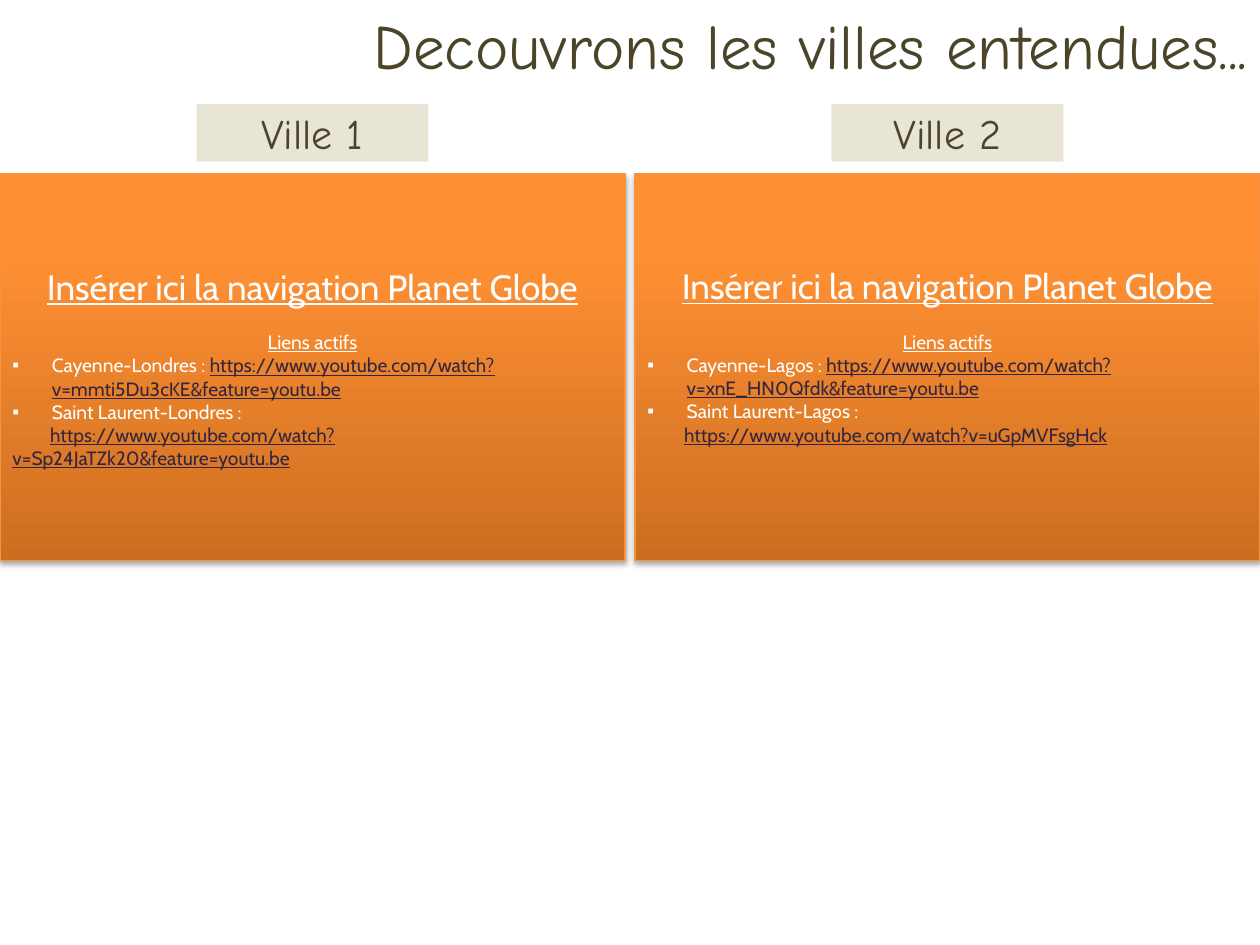
from copy import deepcopy
from pptx import Presentation
from pptx.dml.color import RGBColor
from pptx.enum.shapes import MSO_SHAPE
from pptx.enum.text import MSO_ANCHOR, PP_ALIGN
from pptx.oxml import parse_xml
from pptx.oxml.ns import nsdecls, qn
from pptx.util import Pt

HEX = {"ink": "4A452A", "white": "FFFFFF", "link": "32263F", "tag": "C4BD97",
       "edge": "F69240", "dark": "CC6E20", "mid": "FF9034", "top": "FF9136"}
STOPS = [(0, "dark"), (0.8, "mid"), (1, "top")]
HEAD, BODY = "Comic Neue", "Cabin"
LINE = 13.4  # one line of 11 pt body text

TITLE = "Decouvrons les villes entendues..."
PROMPT = "Insérer ici la navigation Planet Globe"
LINKS = "Liens actifs"
URL = "https://www.youtube.com/watch?v="
# Each row: style, plain text, address
CITIES = [
    {"tag": "Ville 1", "foot": 3.6, "rows": [
        ("bullet", "Cayenne-Londres : ", URL + "mmti5Du3cKE&feature=youtu.be"),
        ("bullet", "Saint Laurent-Londres :", ""),
        ("tab", "\t", URL + "Sp24JaTZk20&feature=youtu.be")]},
    {"tag": "Ville 2", "foot": 3.6 + LINE, "rows": [
        ("bullet", "Cayenne-Lagos : ", URL + "xnE_HN0Qfdk&feature=youtu.be"),
        ("bullet", "Saint Laurent-Lagos :", ""),
        ("indent", "", URL + "uGpMVFsgHck")]},
]

WIDE, HIGH = 720, 540
CARD_W, CARD_H, CARD_Y = 357.2, 221.2, 99.2
TAG_W, TAG_H, TAG_Y = 132.5, 33, 59.4


def color(name):
    return RGBColor.from_string(HEX[name])


def add_run(par, text, size, font=BODY, ink="white", under=False):
    run = par.add_run()
    run.text = text
    run.font.size = Pt(size)
    run.font.name = font
    run.font.underline = under
    run.font.color.rgb = color(ink)


def add_box(x, y, w, h):
    box = slide.shapes.add_shape(MSO_SHAPE.RECTANGLE, Pt(x), Pt(y), Pt(w), Pt(h))
    box.shadow.inherit = False
    box.text_frame.word_wrap = True
    box.text_frame.vertical_anchor = MSO_ANCHOR.MIDDLE
    return box


def paint(box):
    """Give a card its gradient, edge and soft shadow."""
    box.fill.gradient()
    box.fill.gradient_angle = 90
    group = box._element.spPr.find(".//" + qn("a:gsLst"))
    group.append(deepcopy(group[0]))
    for stop, (place, name) in zip(box.fill.gradient_stops, STOPS):
        stop.position = place
        stop.color.rgb = color(name)
    box.line.color.rgb = color("edge")
    box.line.width = Pt(0.75)
    box._element.spPr.find(qn("a:effectLst")).append(parse_xml(
        f'<a:outerShdw {nsdecls("a")} blurRad="{Pt(3.1)}" dist="{Pt(1.8)}" '
        'dir="5400000" rotWithShape="0"><a:srgbClr val="000000">'
        '<a:alpha val="35000"/></a:srgbClr></a:outerShdw>'))


def set_style(par, style):
    par.alignment = PP_ALIGN.LEFT
    props = par._p.get_or_add_pPr()
    if style == "bullet":
        props.set("marL", str(Pt(22.5)))
        props.set("indent", str(Pt(-22.5)))
        props.append(parse_xml(f'<a:buFont {nsdecls("a")} typeface="Arial"/>'))
        props.append(parse_xml(f'<a:buChar {nsdecls("a")} char="▪"/>'))
    elif style == "tab":
        props.append(parse_xml(f'<a:tabLst {nsdecls("a")}>'
                               f'<a:tab pos="{Pt(21.6)}" algn="l"/></a:tabLst>'))
    else:
        props.set("marL", str(Pt(21)))


def add_card(x, city):
    box = add_box(x, CARD_Y, CARD_W, CARD_H)
    paint(box)
    frame = box.text_frame
    frame.margin_bottom = Pt(city["foot"])
    par = frame.paragraphs[0]
    par.alignment = PP_ALIGN.CENTER
    add_run(par, PROMPT, 20, under=True)
    par = frame.add_paragraph()
    par.alignment = PP_ALIGN.CENTER
    par.space_before = Pt(LINE)
    add_run(par, LINKS, 11, under=True)
    for style, text, link in city["rows"]:
        par = frame.add_paragraph()
        set_style(par, style)
        if text:
            add_run(par, text, 11)
        if link:
            add_run(par, link, 11, ink="link", under=True)


def add_tag(x, text):
    box = add_box(x, TAG_Y, TAG_W, TAG_H)
    box.fill.solid()
    box.fill.fore_color.rgb = color("tag")
    box._element.spPr.find(".//" + qn("a:srgbClr")).append(
        parse_xml(f'<a:alpha {nsdecls("a")} val="38000"/>'))
    box.line.fill.background()
    par = box.text_frame.paragraphs[0]
    par.alignment = PP_ALIGN.CENTER
    add_run(par, text, 24, HEAD, "ink")


deck = Presentation()
deck.slide_width, deck.slide_height = Pt(WIDE), Pt(HIGH)
slide = deck.slides.add_slide(deck.slide_layouts[6])

title = slide.shapes.add_textbox(0, 0, Pt(WIDE), Pt(51))
title.text_frame.word_wrap = True
par = title.text_frame.paragraphs[0]
par.alignment = PP_ALIGN.RIGHT
add_run(par, TITLE, 36, HEAD, "ink")

for num, city in enumerate(CITIES):
    left = num * (WIDE - CARD_W)
    add_card(left, city)
    add_tag(left + (CARD_W - TAG_W) / 2, city["tag"])

deck.save("out.pptx")
